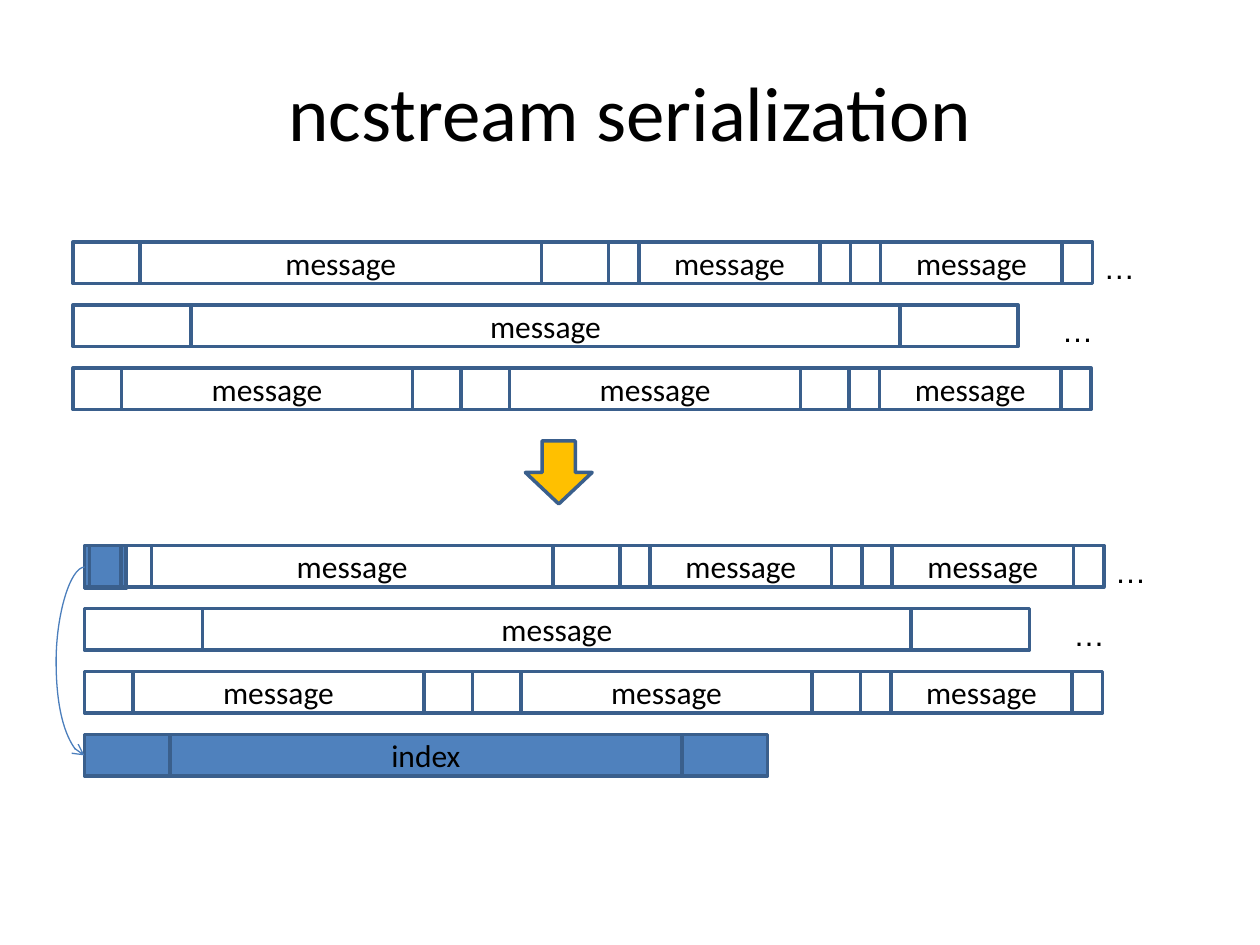
"""Draw the ncstream serialization slide."""
from dataclasses import dataclass
from typing import Any, Optional

from lxml.etree import SubElement
from pptx import Presentation
from pptx.dml.color import RGBColor
from pptx.enum.shapes import MSO_CONNECTOR, MSO_SHAPE
from pptx.enum.text import MSO_ANCHOR, MSO_AUTO_SIZE, PP_ALIGN
from pptx.oxml.ns import qn
from pptx.util import Emu, Inches, Pt


@dataclass(frozen=True)
class Theme:
    ink: str = "000000"
    edge: str = "3A5F8C"
    blue: str = "4F81BD"
    gold: str = "FFC000"
    link: str = "4B7EBC"
    face: str = "Calibri"
    dots: str = "Arial"
    head: int = 44
    body: int = 18
    thick: float = 2
    thin: float = 0.75


@dataclass(frozen=True)
class Box:
    left: float
    top: float
    width: float
    height: float = 0.33

    def place(self) -> tuple:
        """Return the four lengths of the box."""
        return tuple(Inches(n) for n in (self.left, self.top, self.width, self.height))


@dataclass(frozen=True)
class Row:
    widths: tuple
    dots: Optional[float] = None
    group: bool = False


THEME = Theme()
STEP = 0.5
ROWS = (
    Row((4.25, 1.92, 1.92), 8.08, True),
    Row((7.5,), 7.75),
    Row((3.08, 3.08, 1.92)),
)


def apply(item: Any, values: dict) -> None:
    """Set each named value on the item."""
    for name, value in values.items():
        setattr(item, name, value)


def write(frame: Any, text: str, face: str, size: int, align: PP_ALIGN) -> None:
    """Write one styled line of text."""
    frame.text = text
    line = frame.paragraphs[0]
    line.alignment = align
    apply(line.font, {"name": face, "size": Pt(size)})
    line.font.color.rgb = RGBColor.from_string(THEME.ink)


def draw(shapes: Any, kind: MSO_SHAPE, box: Box, fill: str = "", text: str = "") -> Any:
    """Draw an outlined shape with an optional fill and label."""
    shape = shapes.add_shape(kind, *box.place())
    shape.shadow.inherit = False
    if fill:
        shape.fill.solid()
        shape.fill.fore_color.rgb = RGBColor.from_string(fill)
    else:
        shape.fill.background()
    shape.line.color.rgb = RGBColor.from_string(THEME.edge)
    shape.line.width = Pt(THEME.thick)
    if text:
        shape.text_frame.vertical_anchor = MSO_ANCHOR.MIDDLE
        write(shape.text_frame, text, THEME.face, THEME.body, PP_ALIGN.CENTER)
    return shape


def trail(shapes: Any, left: float, top: float) -> None:
    """Add the dots after a row."""
    frame = shapes.add_textbox(*Box(left, top, 0.42, 0.4).place()).text_frame
    apply(frame, {"word_wrap": True, "auto_size": MSO_AUTO_SIZE.SHAPE_TO_FIT_TEXT})
    write(frame, "…", THEME.dots, THEME.body, PP_ALIGN.LEFT)


def stream(shapes: Any, left: float, top: float) -> None:
    """Draw the rows of messages in one stream."""
    for place, row in enumerate(ROWS):
        level = top + place * STEP
        home = shapes.add_group_shape().shapes if row.group else shapes
        if row.dots:
            trail(home, left + row.dots, level)
        start = left
        for width in row.widths:
            draw(home, MSO_SHAPE.FLOWCHART_PREDEFINED_PROCESS,
                 Box(start, level, width), text="message")
            start += width


def join(shapes: Any, first: Any, last: Any, bulge: float) -> None:
    """Curve an arrow out to the left between two left sides."""
    curve = shapes.add_connector(MSO_CONNECTOR.CURVE, first.left, first.top,
                                 last.left, last.top + last.height)
    curve.begin_connect(first, 1)
    curve.end_connect(last, 1)
    curve.width = Emu(1588)
    curve.line.color.rgb = RGBColor.from_string(THEME.link)
    curve.line.width = Pt(THEME.thin)
    props = curve._element.spPr
    frame = props.find(qn("a:xfrm"))
    for name, value in {"rot": "10800000", "flipV": "1"}.items():
        frame.set(name, value)
    form = props.find(qn("a:prstGeom"))
    guides = form.find(qn("a:avLst"))
    if guides is None:
        guides = SubElement(form, qn("a:avLst"))
    ratio = round(Inches(bulge) / curve.width * 100000)
    SubElement(guides, qn("a:gd"), name="adj1", fmla=f"val {ratio}")
    SubElement(props.find(qn("a:ln")), qn("a:tailEnd"), type="arrow")
    SubElement(props, qn("a:effectLst"))


def main() -> None:
    """Build and save the slide."""
    deck = Presentation()
    apply(deck, {"slide_width": Inches(10), "slide_height": Inches(7.5)})
    slide = deck.slides.add_slide(deck.slide_layouts[5])
    shapes = slide.shapes
    title = shapes.title
    apply(title, dict(zip(("left", "top", "width", "height"),
                          Box(0.5, 0.25, 9, 1.25).place())))
    title.text_frame.vertical_anchor = MSO_ANCHOR.MIDDLE
    write(title.text_frame, "ncstream serialization", THEME.face, THEME.head, PP_ALIGN.CENTER)

    left, top = 0.67, 4.33
    stream(shapes, 0.58, 1.92)
    draw(shapes, MSO_SHAPE.DOWN_ARROW, Box(4.17, 3.5, 0.53, 0.5), THEME.gold)
    tag = draw(shapes, MSO_SHAPE.FLOWCHART_PREDEFINED_PROCESS,
               Box(left, top, 0.33, 0.34), THEME.blue)
    stream(shapes, left, top)
    index = draw(shapes, MSO_SHAPE.FLOWCHART_PREDEFINED_PROCESS,
                 Box(left, top + len(ROWS) * STEP, 5.42), THEME.blue, "index")
    join(shapes, tag, index, 0.25)
    deck.save("out.pptx")


if __name__ == "__main__":
    main()
